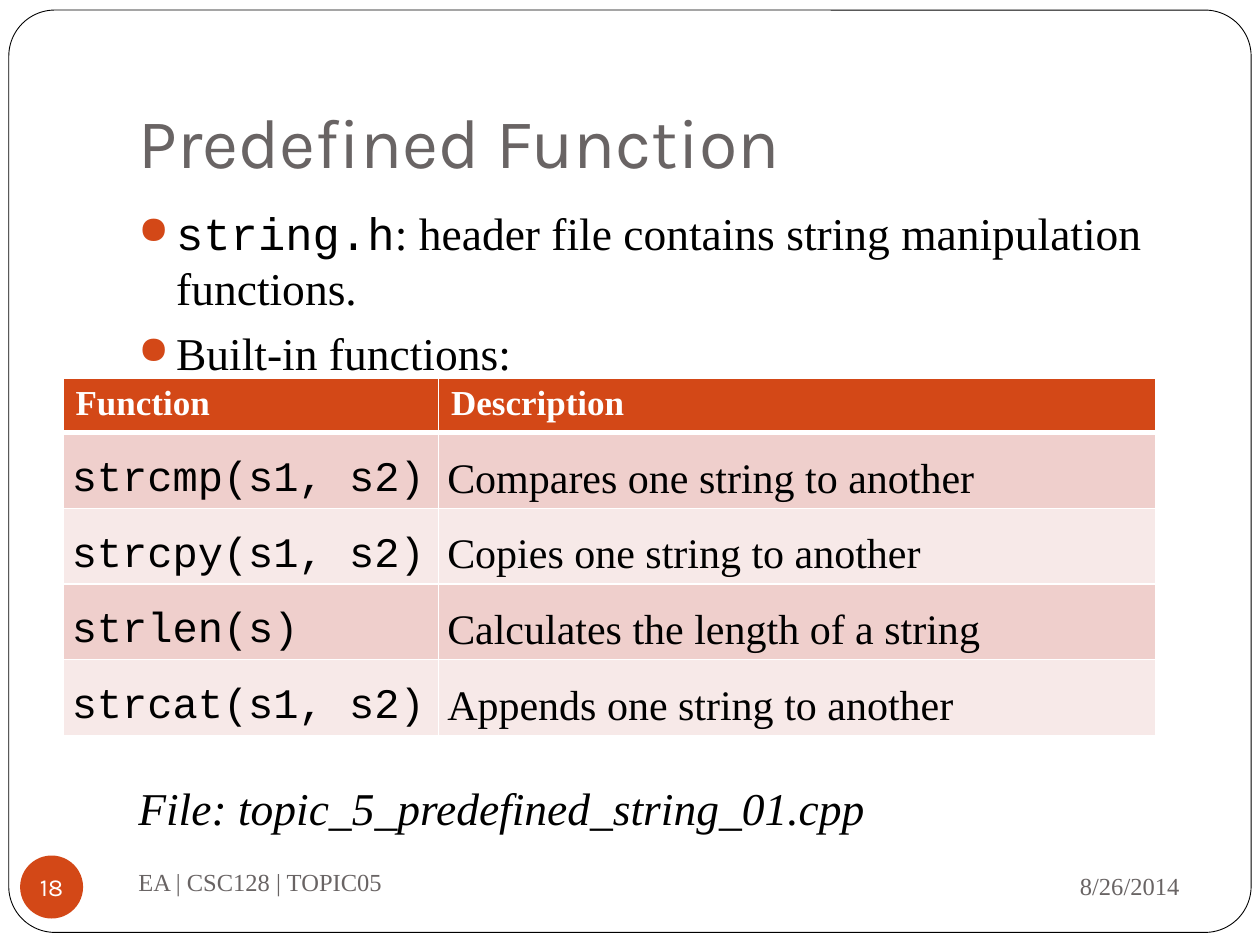
from lxml import etree
from pptx import Presentation
from pptx.dml.color import RGBColor
from pptx.enum import shapes, text
from pptx.oxml import ns
from pptx.util import Inches, Pt

SERIF, MONO, SANS = "Times New Roman", "Courier New", "Karla"
ORANGE, GREY, WHITE, BLACK = "D34817", "696464", "FFFFFF", "000000"
BANDS = ("EFCFCC", "F7E9E8")
FUNCTIONS = [
    ("strcmp(s1, s2)", "Compares one string to another"),
    ("strcpy(s1, s2)", "Copies one string to another"),
    ("strlen(s)", "Calculates the length of a string"),
    ("strcat(s1, s2)", "Appends one string to another"),
]


def color(value):
    return RGBColor.from_string(value)


def add_child(parent, tag, **attributes):
    return etree.SubElement(parent, ns.qn(tag), attributes)


def add_span(para, words, size, font, ink=BLACK, bold=False, italic=False):
    span = para.add_run()
    span.text = words
    span.font.size = Pt(size)
    span.font.name = font
    span.font.color.rgb = color(ink)
    span.font.bold = bold
    span.font.italic = italic


def set_margins(target, left, top, right, bottom):
    target.margin_left, target.margin_top = Inches(left), Inches(top)
    target.margin_right, target.margin_bottom = Inches(right), Inches(bottom)


def add_box(page, left, top, width, height, anchor):
    frame = page.shapes.add_textbox(
        Inches(left), Inches(top), Inches(width), Inches(height)).text_frame
    frame.word_wrap = True
    frame.vertical_anchor = anchor
    return frame


def add_shape(page, kind, left, top, width, height, fill):
    shape = page.shapes.add_shape(
        kind, Inches(left), Inches(top), Inches(width), Inches(height))
    shape.shadow.inherit = False
    shape.fill.solid()
    shape.fill.fore_color.rgb = color(fill)
    return shape


def add_bullet(para):
    properties = para._p.get_or_add_pPr()
    properties.set("marL", str(Inches(0.3)))
    properties.set("indent", str(Inches(-0.3)))
    ink = add_child(properties, "a:buClr")
    add_child(ink, "a:srgbClr", val=ORANGE)
    add_child(properties, "a:buSzPct", val="85000")
    add_child(properties, "a:buChar", char="●")


def add_frame(page):
    border = add_shape(page, shapes.MSO_SHAPE.ROUNDED_RECTANGLE,
                       0.07, 0.08, 9.86, 7.32, WHITE)
    border.adjustments[0] = 0.05
    border.line.color.rgb = color(BLACK)
    border.line.width = Pt(0.5)


def add_title(page):
    frame = add_box(page, 1, 0.3, 8.5, 1.25, text.MSO_ANCHOR.BOTTOM)
    set_margins(frame, 0.1, 0.05, 0.1, 0.1)
    add_span(frame.paragraphs[0], "Predefined Function", 40, SANS, GREY)


def add_footer(page):
    middle = text.MSO_ANCHOR.MIDDLE
    date = add_box(page, 6.75, 6.77, 2.71, 0.52, middle).paragraphs[0]
    date.alignment = text.PP_ALIGN.RIGHT
    add_span(date, "8/26/2014", 14, SERIF, GREY)
    course = add_box(page, 1, 6.75, 4.33, 0.5, middle).paragraphs[0]
    add_span(course, "EA | CSC128 | TOPIC05", 14, SERIF, GREY)

    badge = add_shape(page, shapes.MSO_SHAPE.OVAL, 0.16, 6.79, 0.5, 0.5, ORANGE)
    badge.line.fill.background()
    frame = badge.text_frame
    frame.word_wrap = False
    frame.vertical_anchor = middle
    set_margins(frame, 0, 0, 0, 0)
    number = frame.paragraphs[0]
    number.alignment = text.PP_ALIGN.CENTER
    add_span(number, "18", 14, SANS, WHITE)


def add_body(page):
    frame = add_box(page, 1, 1.58, 8.5, 5, text.MSO_ANCHOR.TOP)
    header = frame.paragraphs[0]
    builtin, file_name = frame.add_paragraph(), frame.add_paragraph()
    for para in (header, builtin):
        para.space_before = Pt(5.8)
        add_bullet(para)
    add_span(header, "string.h", 26, MONO)
    add_span(header, ": header file contains string manipulation functions.",
             26, SERIF)
    add_span(builtin, "Built-in functions:", 26, SERIF)
    file_name.space_before = Pt(229)  # leaves room for the table
    add_span(file_name, "File: topic_5_predefined_string_01.cpp", 26, SERIF,
             italic=True)


def style_cell(cell, fill, top=1, bottom=1):
    """Fill the cell and give it white borders; widths in points."""
    properties = cell._tc.get_or_add_tcPr()
    for side, width in (("L", 1), ("R", 1), ("T", top), ("B", bottom)):
        line = add_child(properties, f"a:ln{side}", w=str(Pt(width)))
        add_child(add_child(line, "a:solidFill"), "a:srgbClr", val=WHITE)
    cell.fill.solid()
    cell.fill.fore_color.rgb = color(fill)


def add_function_table(page):
    table = page.shapes.add_table(
        len(FUNCTIONS) + 1, 2, Inches(0.5), Inches(3),
        Inches(8.67), Inches(2.69)).table
    for column, width in zip(table.columns, (2.98, 5.69)):
        column.width = Inches(width)
    for index, row in enumerate(table.rows):
        row.height = Inches(0.57 if index else 0.41)

    for column, heading in enumerate(("Function", "Description")):
        cell = table.cell(0, column)
        style_cell(cell, ORANGE, bottom=3)
        add_span(cell.text_frame.paragraphs[0], heading, 20, SERIF, WHITE,
                 bold=True)

    for index, entry in enumerate(FUNCTIONS, start=1):
        for column, (words, font) in enumerate(zip(entry, (MONO, SERIF))):
            cell = table.cell(index, column)
            style_cell(cell, BANDS[(index - 1) % 2], top=3 if index == 1 else 1)
            set_margins(cell, 0.07, 0, 0.07, 0)
            para = cell.text_frame.paragraphs[0]
            para.alignment = text.PP_ALIGN.JUSTIFY
            para.line_spacing = 1.5
            add_span(para, words, 24, font)


def main():
    deck = Presentation()
    deck.slide_width, deck.slide_height = Inches(10), Inches(7.5)
    page = deck.slides.add_slide(deck.slide_layouts[6])
    add_frame(page)
    add_title(page)
    add_footer(page)
    add_body(page)
    add_function_table(page)
    deck.save("out.pptx")


if __name__ == "__main__":
    main()
